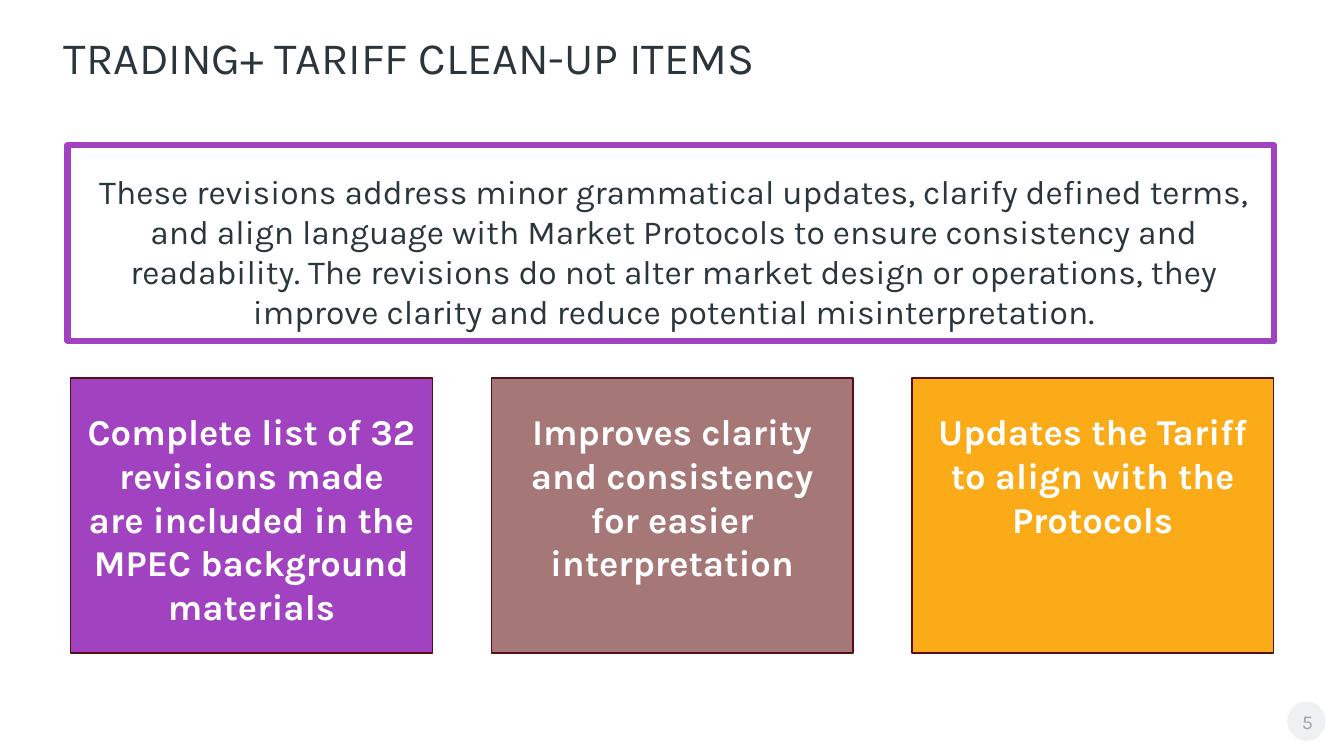
from pptx import Presentation
from pptx import util as u
from pptx.dml.color import RGBColor
from pptx.enum import shapes, text

INK, PURPLE, WHITE = "2A363B", "A142C0", "FFFFFF"


def color(hex_code):
    return RGBColor.from_string(hex_code)


def write(frame, words, size, hex_code, bold=False, align=text.PP_ALIGN.CENTER):
    """Fill a text frame with one wrapped paragraph and return that paragraph."""
    frame.word_wrap = True
    frame.auto_size = text.MSO_AUTO_SIZE.NONE
    para = frame.paragraphs[0]
    para.alignment = align
    span = para.add_run()
    span.text = words
    span.font.name = "Karla"
    span.font.size = u.Pt(size)
    span.font.bold = bold
    span.font.color.rgb = color(hex_code)
    return para


deck = Presentation()
deck.slide_width, deck.slide_height = u.Cm(33.87), u.Cm(19.05)
page = deck.slides.add_slide(deck.slide_layouts[5])

# Page number badge
badge = page.shapes.add_shape(shapes.MSO_SHAPE.OVAL, u.Cm(32.44), u.Cm(17.68), u.Cm(0.97), u.Cm(0.99))
badge.shadow.inherit = False
badge.fill.solid()
badge.fill.fore_color.rgb = color("EEF0F1")
badge.line.fill.background()
number = page.shapes.add_textbox(u.Cm(32.44), u.Cm(17.58), u.Cm(1.02), u.Cm(1.02)).text_frame
number.margin_left = number.margin_right = u.Cm(0.08)
number.vertical_anchor = text.MSO_ANCHOR.BOTTOM
write(number, "5", 14, "99A4AD")

# Title
title = page.shapes.title
title.left, title.top, title.width, title.height = u.Cm(1.35), u.Cm(0.74), u.Cm(30.4), u.Cm(2.62)
title.text_frame.vertical_anchor = text.MSO_ANCHOR.TOP
title.text_frame.margin_top = u.Cm(0.32)
heading = write(title.text_frame, "TRADING+ TARIFF CLEAN-UP ITEMS", 32, INK, align=text.PP_ALIGN.LEFT)
heading.line_spacing = 0.75

# Framed summary
border = page.shapes.add_shape(shapes.MSO_SHAPE.RECTANGLE, u.Cm(1.7), u.Cm(3.66), u.Cm(30.4), u.Cm(4.93))
border.shadow.inherit = False
border.fill.background()
border.line.color.rgb = color(PURPLE)
border.line.width = u.Pt(4.5)
summary = page.shapes.add_textbox(u.Cm(1.78), u.Cm(4.17), u.Cm(30.4), u.Cm(4.37))
write(
    summary.text_frame,
    "These revisions address minor grammatical updates, clarify defined terms, and align language "
    "with Market Protocols to ensure consistency and readability. The revisions do not alter market "
    "design or operations, they improve clarity and reduce potential misinterpretation.",
    24, INK,
)

# Three cards: fill, text width in cm, wording
cards = [
    (PURPLE, 8.76, "Complete list of 32 revisions made are included in the MPEC background materials"),
    ("A67777", 8.41, "Improves clarity and consistency for easier interpretation"),
    ("FBAB18", 8.41, "Updates the Tariff to align with the Protocols"),
]
CARD_WIDTH, CARD_PITCH = 9.12, 10.6
for index, (fill, text_width, words) in enumerate(cards):
    left = 1.78 + index * CARD_PITCH
    card = page.shapes.add_shape(shapes.MSO_SHAPE.RECTANGLE, u.Cm(left), u.Cm(9.53), u.Cm(CARD_WIDTH), u.Cm(6.93))
    card.shadow.inherit = False
    card.fill.solid()
    card.fill.fore_color.rgb = color(fill)
    card.line.color.rgb = color("570E15")
    card.line.width = u.Pt(1)
    text_left = left + (CARD_WIDTH - text_width) / 2
    box = page.shapes.add_textbox(u.Cm(text_left), u.Cm(10.19), u.Cm(text_width), u.Cm(5.82))
    write(box.text_frame, words, 26, WHITE, bold=True)

deck.save("out.pptx")
